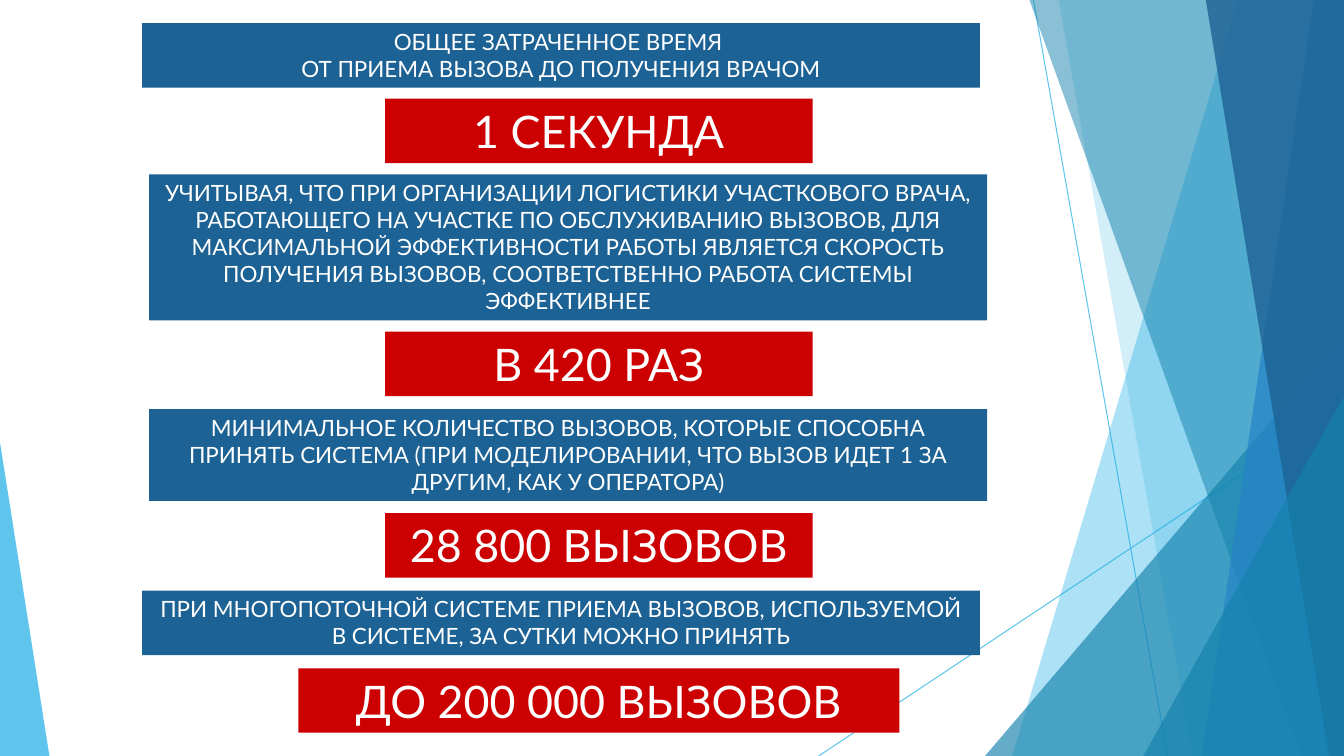
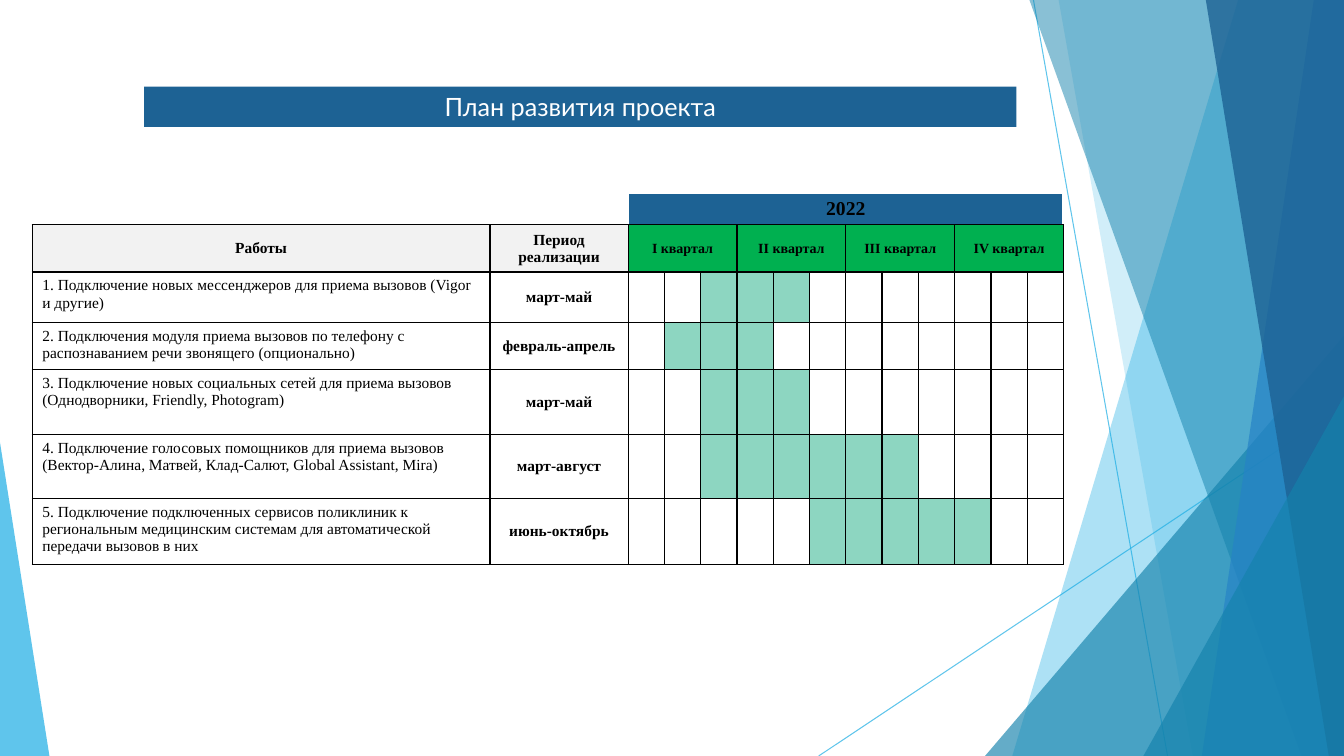
"""Build two slides on call handling: the results and the development plan."""
from lxml import etree
from pptx import Presentation
from pptx.dml.color import RGBColor
from pptx.enum import shapes, text
from pptx.oxml import ns
from pptx.util import Inches, Pt

COLORS = {
    "sky": "1CADE4", "teal": "1482AC", "azure": "2683C6", "navy": "1D6294",
    "red": "CC0000", "green": "00B050", "mint": "8DD6C1", "gray": "F2F2F2",
    "white": "FFFFFF", "black": "000000",
}
RGB = {name: RGBColor.from_string(code) for name, code in COLORS.items()}
BODY_FONT, TABLE_FONT = "Lato", "Times New Roman"


def paint(shape, color, opacity=100):
    shape.shadow.inherit = False
    shape.line.fill.background()
    shape.fill.solid()
    shape.fill.fore_color.rgb = RGB[color]
    if opacity < 100:
        tint = shape._element.spPr.find(".//" + ns.qn("a:srgbClr"))
        etree.SubElement(tint, ns.qn("a:alpha"), val=str(opacity * 1000))


def write(frame, lines, font, size, color, bold=False, align=text.PP_ALIGN.CENTER):
    for number, line in enumerate(lines):
        paragraph = frame.add_paragraph() if number else frame.paragraphs[0]
        paragraph.alignment = align
        run = paragraph.add_run()
        run.text = line
        run.font.name = font
        run.font.size = Pt(size)
        run.font.bold = bold
        run.font.color.rgb = RGB[color]


prs = Presentation()
prs.slide_width, prs.slide_height = Inches(13.33), Inches(7.5)
results, plan = [prs.slides.add_slide(prs.slide_layouts[6]) for _ in range(2)]

rays = [(10.25, 0, 11.58, 7.5), (13.33, 4.03, 8.12, 7.5)]
facets = [
    ("band", (12.28, 10.04), "sky", 36),
    ("band", (10.5, 11.83), "sky", 20),
    ("wedge", (9.77, 3.33, 3.56, 4.17, 1), "teal", 66),
    ("band", (10.21, 12.91), "teal", 50),
    ("band", (13.03, 11.92), "azure", 70),
    ("band", (11.96, 13.18), "navy", 80),
    ("wedge", (11.34, 3.93, 1.99, 3.57, 1), "teal", 66),
    ("wedge", (0, 4.39, 0.49, 3.11, 0), "sky", 70),
]
for slide in (results, plan):
    for ends in rays:
        ray = slide.shapes.add_connector(shapes.MSO_CONNECTOR.STRAIGHT, *map(Inches, ends))
        ray.line.width = Pt(0.75)
        ray.line.color.rgb = RGB["sky"]
        tint = ray._element.spPr.find(".//" + ns.qn("a:srgbClr"))
        etree.SubElement(tint, ns.qn("a:alpha"), val="70000")
        etree.SubElement(ray._element.spPr, ns.qn("a:effectLst"))
    for kind, place, color, opacity in facets:
        if kind == "band":
            top_x, bottom_x = place
            outline = slide.shapes.build_freeform(Inches(top_x), 0)
            corners = [(13.33, 0), (13.33, 7.5), (bottom_x, 7.5)]
            outline.add_line_segments([(Inches(x), Inches(y)) for x, y in corners])
            facet = outline.convert_to_shape()
        else:
            *box, apex = place
            facet = slide.shapes.add_shape(
                shapes.MSO_SHAPE.ISOSCELES_TRIANGLE, *map(Inches, box))
            facet.adjustments[0] = apex
        paint(facet, color, opacity)

banners = [
    (results, (1.41, 0.23, 8.31, 0.64), "navy", 16,
     ["ОБЩЕЕ ЗАТРАЧЕННОЕ ВРЕМЯ ", "ОТ ПРИЕМА ВЫЗОВА ДО ПОЛУЧЕНИЯ ВРАЧОМ"]),
    (results, (3.82, 0.98, 4.24, 0.64), "red", 32, ["1 СЕКУНДА"]),
    (results, (1.48, 1.73, 8.31, 1.45), "navy", 16,
     ["УЧИТЫВАЯ, ЧТО ПРИ ОРГАНИЗАЦИИ ЛОГИСТИКИ УЧАСТКОВОГО ВРАЧА, "
      "РАБОТАЮЩЕГО НА УЧАСТКЕ ПО ОБСЛУЖИВАНИЮ ВЫЗОВОВ, ДЛЯ МАКСИМАЛЬНОЙ "
      "ЭФФЕКТИВНОСТИ РАБОТЫ ЯВЛЯЕТСЯ СКОРОСТЬ ПОЛУЧЕНИЯ ВЫЗОВОВ, "
      "СООТВЕТСТВЕННО РАБОТА СИСТЕМЫ ЭФФЕКТИВНЕЕ"]),
    (results, (3.82, 3.29, 4.24, 0.64), "red", 32, ["В 420 РАЗ"]),
    (results, (1.48, 4.06, 8.31, 0.91), "navy", 16,
     ["МИНИМАЛЬНОЕ КОЛИЧЕСТВО ВЫЗОВОВ, КОТОРЫЕ СПОСОБНА ПРИНЯТЬ СИСТЕМА "
      "(ПРИ МОДЕЛИРОВАНИИ, ЧТО ВЫЗОВ ИДЕТ 1 ЗА ДРУГИМ, КАК У ОПЕРАТОРА)"]),
    (results, (3.82, 5.09, 4.24, 0.64), "red", 32, ["28 800 ВЫЗОВОВ"]),
    (results, (1.41, 5.86, 8.31, 0.64), "navy", 16,
     ["ПРИ МНОГОПОТОЧНОЙ СИСТЕМЕ ПРИЕМА ВЫЗОВОВ, ИСПОЛЬЗУЕМОЙ В СИСТЕМЕ, "
      "ЗА СУТКИ МОЖНО ПРИНЯТЬ"]),
    (results, (2.96, 6.63, 5.96, 0.64), "red", 32, ["ДО 200 000 ВЫЗОВОВ"]),
    (plan, (1.43, 0.86, 8.65, 0.4), "navy", 18, ["План развития проекта"]),
]
for slide, box, color, size, lines in banners:
    banner = slide.shapes.add_shape(shapes.MSO_SHAPE.RECTANGLE, *map(Inches, box))
    paint(banner, color)
    banner.text_frame.word_wrap = True
    banner.text_frame.auto_size = text.MSO_AUTO_SIZE.SHAPE_TO_FIT_TEXT
    banner.text_frame.vertical_anchor = text.MSO_ANCHOR.TOP
    write(banner.text_frame, lines, BODY_FONT, size, "white")

tasks = [
    ("1. Подключение новых мессенджеров для приема вызовов (Vigor и другие)",
     "март-май", 3, 5),
    ("2. Подключения модуля приема вызовов по телефону с распознаванием речи "
     "звонящего (опционально)", "февраль-апрель", 2, 4),
    ("3. Подключение новых социальных сетей для приема вызовов "
     "(Однодворники, Friendly, Photogram)", "март-май", 3, 5),
    ("4. Подключение голосовых помощников для приема вызовов "
     "(Вектор-Алина, Матвей, Клад-Салют, Global Assistant, Mira)",
     "март-август", 3, 8),
    ("5. Подключение подключенных сервисов поликлиник к региональным "
     "медицинским системам для автоматической передачи вызовов в них",
     "июнь-октябрь", 6, 10),
]
column_widths = [4.54, 1.37] + [0.36] * 12
row_heights = [0.32, 0.47, 0.5, 0.47, 0.64, 0.64, 0.65]
schedule = plan.shapes.add_table(
    len(row_heights), len(column_widths), Inches(0.32), Inches(1.91),
    Inches(sum(column_widths)), Inches(sum(row_heights))).table
schedule.first_row = schedule.horz_banding = False
for column, width in zip(schedule.columns, column_widths):
    column.width = Inches(width)
for row, height in zip(schedule.rows, row_heights):
    row.height = Inches(height)

entries = {
    (0, 2): ("2022", 14, "navy", 12),
    (1, 0): ("Работы", 11, "gray", 1),
    (1, 1): ("Период реализации", 11, "gray", 1),
}
for quarter, numeral in enumerate(["I", "II", "III", "IV"]):
    entries[1, 2 + 3 * quarter] = (f"{numeral} квартал", 10, "green", 3)
for r, (task, period, first, last) in enumerate(tasks, 2):
    entries[r, 0] = (task, 11, "white", 1)
    entries[r, 1] = (period, 11, "white", 1)
    for month in range(first, last + 1):
        entries[r, month + 1] = ("", 11, "mint", 1)

for r in range(len(row_heights)):
    for c in range(len(column_widths)):
        cell = schedule.cell(r, c)
        if r == 0:
            cell.margin_top = cell.margin_bottom = 0
        cell.fill.background()
        if (r, c) in entries:
            words, size, color, span = entries[r, c]
            cell.fill.solid()
            cell.fill.fore_color.rgb = RGB[color]
            is_task = r > 1 and c == 0
            if span > 1:
                cell.merge(schedule.cell(r, c + span - 1))
            if words:
                cell.vertical_anchor = text.MSO_ANCHOR.TOP if is_task else text.MSO_ANCHOR.MIDDLE
                write(cell.text_frame, [words], TABLE_FONT, size, "black", not is_task,
                      text.PP_ALIGN.LEFT if is_task else text.PP_ALIGN.CENTER)
        for position, side in enumerate(["lnL", "lnR", "lnT", "lnB"]):
            edge = etree.Element(ns.qn("a:" + side))
            cell._tc.get_or_add_tcPr().insert(position, edge)
            if r > 0 or side == "lnB":
                color, weight = "black", 1
            elif c > 1 or (c == 1 and side == "lnR"):
                color, weight = "white", 2.25
            else:
                etree.SubElement(edge, ns.qn("a:noFill"))
                continue
            edge.set("w", str(Pt(weight)))
            ink = etree.SubElement(edge, ns.qn("a:solidFill"))
            etree.SubElement(ink, ns.qn("a:srgbClr"), val=COLORS[color])

prs.save("out.pptx")
